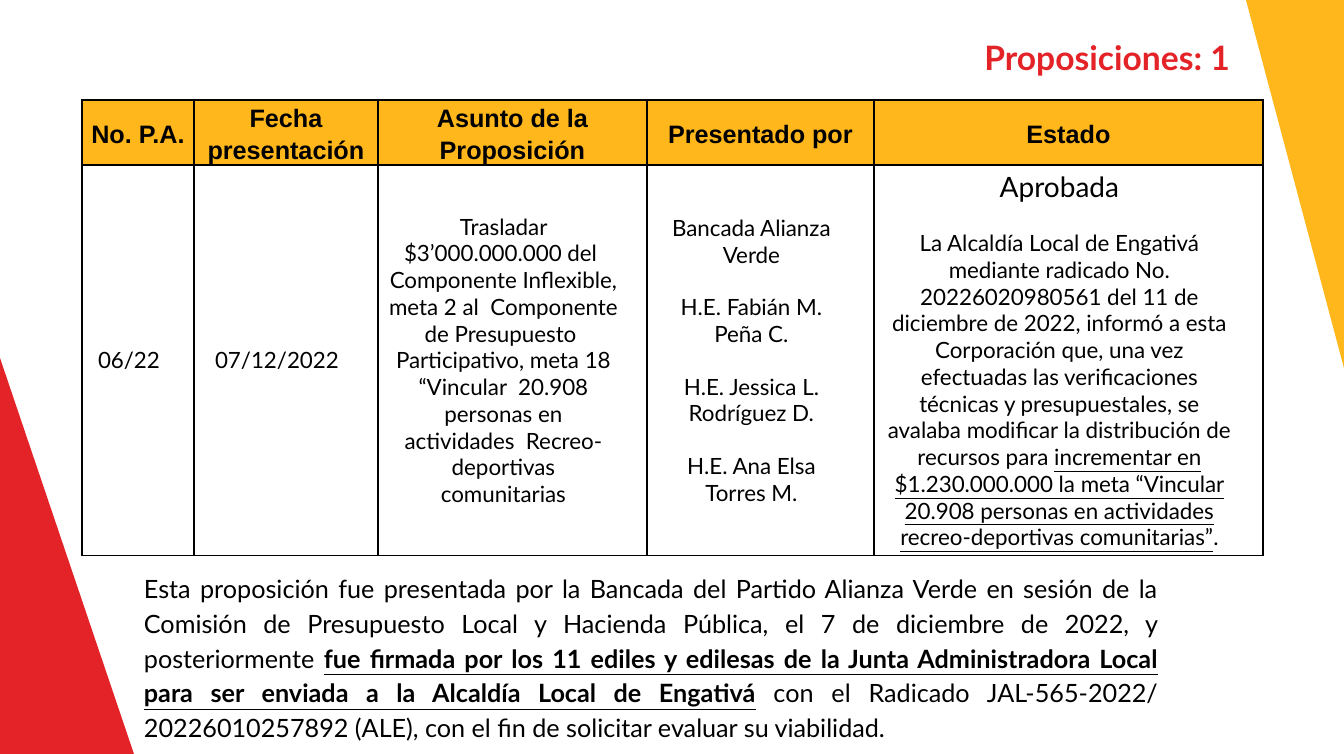
import pptx
import pptx.util
import pptx.dml.color
import pptx.enum.text
import pptx.oxml
import pptx.oxml.ns

COLORS = {"red": "E42328", "amber": "FFB71B", "ink": "000000"}
ALIGN = pptx.enum.text.PP_ALIGN
MIDDLE = pptx.enum.text.MSO_ANCHOR.MIDDLE
SCALE = 914400 / 100.8  # EMU in one px


def px(n):
    return pptx.util.Emu(round(n * SCALE))


def rgb(name):
    return pptx.dml.color.RGBColor.from_string(COLORS[name])


class Deck:
    """Holds the text style and the current slide."""

    def __init__(self, width, height):
        self.font = "Lato"
        self.prs = pptx.Presentation()
        self.prs.slide_width, self.prs.slide_height = px(width), px(height)
        self.s = self.prs.slides.add_slide(self.prs.slide_layouts[5])

    def paragraph(self, p, runs, size, align, color="ink", bold=False,
                  font=None, line=None):
        """Fill p with a string, or with (text, emphasis) pairs."""
        p.alignment = align
        if line:
            p.line_spacing = line
        f = p.font
        f.name, f.size, f.bold = font or self.font, pptx.util.Pt(size), bold
        f.color.rgb = rgb(color)
        if isinstance(runs, str):
            runs = [(runs, {})]
        for text, emphasis in runs:
            r = p.add_run()
            r.text = text
            for name, value in emphasis.items():
                setattr(r.font, name, value)

    def place(self, sp, box):
        sp.left, sp.top, sp.width, sp.height = map(px, box)

    def title(self, text, box):
        sp = self.s.shapes.title
        self.place(sp, box)
        tf = sp.text_frame
        tf.auto_size = pptx.enum.text.MSO_AUTO_SIZE.NONE
        tf.vertical_anchor = MIDDLE
        self.paragraph(tf.paragraphs[0], text, 24, ALIGN.RIGHT, "red", True)

    def text(self, runs, box):
        tf = self.s.shapes.add_textbox(*map(px, box)).text_frame
        tf.word_wrap = True
        self.paragraph(tf.paragraphs[0], runs, 18, ALIGN.JUSTIFY, line=1.15)

    def polygon(self, points, color):
        fb = self.s.shapes.build_freeform(*points[0], scale=SCALE)
        fb.add_line_segments(points[1:], close=True)
        sp = fb.convert_to_shape()
        sp.shadow.inherit = False
        sp.fill.solid()
        sp.fill.fore_color.rgb = rgb(color)
        sp.line.fill.background()

    def borders(self, cell):
        tcPr = cell._tc.get_or_add_tcPr()
        for side in "LRTB":
            tcPr.append(pptx.oxml.parse_xml(
                f'<a:ln{side} {pptx.oxml.ns.nsdecls("a")} w="12700"><a:solidFill>'
                f'<a:srgbClr val="{COLORS["ink"]}"/></a:solidFill></a:ln{side}>'))

    def table(self, headers, body, left, top, widths, heights):
        tbl = self.s.shapes.add_table(
            2, len(headers), px(left), px(top),
            px(sum(widths)), px(sum(heights))).table
        tbl.first_row = tbl.horz_banding = False
        for row, height in zip(tbl.rows, heights):
            row.height = px(height)
        for i, width in enumerate(widths):
            tbl.columns[i].width = px(width)
            self.header_cell(tbl.cell(0, i), headers[i])
            self.body_cell(tbl.cell(1, i), body[i])

    def header_cell(self, cell, text):
        self.borders(cell)
        cell.fill.solid()
        cell.fill.fore_color.rgb = rgb("amber")
        cell.vertical_anchor = MIDDLE
        cell.margin_left = cell.margin_right = px(7)
        cell.margin_top = cell.margin_bottom = 0
        self.paragraph(cell.text_frame.paragraphs[0], text, 18, ALIGN.CENTER,
                       bold=True, font="Arial", line=1.15)

    def body_cell(self, cell, paragraphs):
        self.borders(cell)
        cell.fill.background()
        cell.vertical_anchor = MIDDLE
        cell.margin_left, cell.margin_right = px(10), px(28)
        tf = cell.text_frame
        for i, (runs, size) in enumerate(paragraphs):
            p = tf.add_paragraph() if i else tf.paragraphs[0]
            if i:
                p.space_before = pptx.util.Pt(18.4)
            self.paragraph(p, runs, size, ALIGN.CENTER)


HEADERS = ["No. P.A.", "Fecha presentación", "Asunto de la Proposición",
           "Presentado por", "Estado"]
SPONSORS = ["Bancada Alianza Verde", "H.E. Fabián M. Peña C.",
            "H.E. Jessica L. Rodríguez D.", "H.E. Ana Elsa Torres M."]
SUBJECT = ("Trasladar $3’000.000.000 del  Componente Inﬂexible, meta 2 al  "
           "Componente de Presupuesto  Participativo, meta 18 “Vincular  20.908 "
           "personas en actividades  Recreo-deportivas comunitarias")
STATUS = [
    ("La Alcaldía Local de Engativá mediante radicado No. 20226020980561 del "
     "11 de diciembre de 2022, informó a esta Corporación que, una vez "
     "efectuadas las verificaciones técnicas y presupuestales, se avalaba "
     "modificar la distribución de recursos para ", {}),
    ("incrementar en $1.230.000.000 la meta “Vincular 20.908 personas en "
     "actividades recreo-deportivas comunitarias”", {"underline": True}),
    (".", {}),
]
SUMMARY = [
    ("Esta proposición fue presentada por la Bancada del Partido Alianza Verde "
     "en sesión de la Comisión de Presupuesto Local y Hacienda Pública, el 7 de "
     "diciembre de 2022, y posteriormente ", {}),
    ("fue firmada por los 11 ediles y edilesas de la Junta Administradora Local "
     "para ser enviada a la Alcaldía Local de Engativá",
     {"bold": True, "underline": True}),
    (" con el Radicado JAL-565-2022/ 20226010257892 (ALE), con el fin de "
     "solicitar evaluar su viabilidad.", {}),
]


def main():
    deck = Deck(1344, 754)

    # Proposal table
    body = [[("06/22", 16)], [("07/12/2022", 16)], [(SUBJECT, 16)],
            [(name, 16) for name in SPONSORS],
            [("Aprobada", 20), (STATUS, 16)]]
    deck.table(HEADERS, body, 82, 100, [112, 184, 269, 227, 389], [65, 390])

    # Corner triangles
    deck.polygon([(0, 358), (0, 754), (134, 754)], "red")
    deck.polygon([(1344, 0), (1246, 0), (1344, 368)], "amber")

    # Title and summary
    deck.title("Proposiciones: 1", (104, 32, 1136, 50))
    deck.text(SUMMARY, (134, 564, 1034, 182))

    deck.prs.save("out.pptx")


if __name__ == "__main__":
    main()
